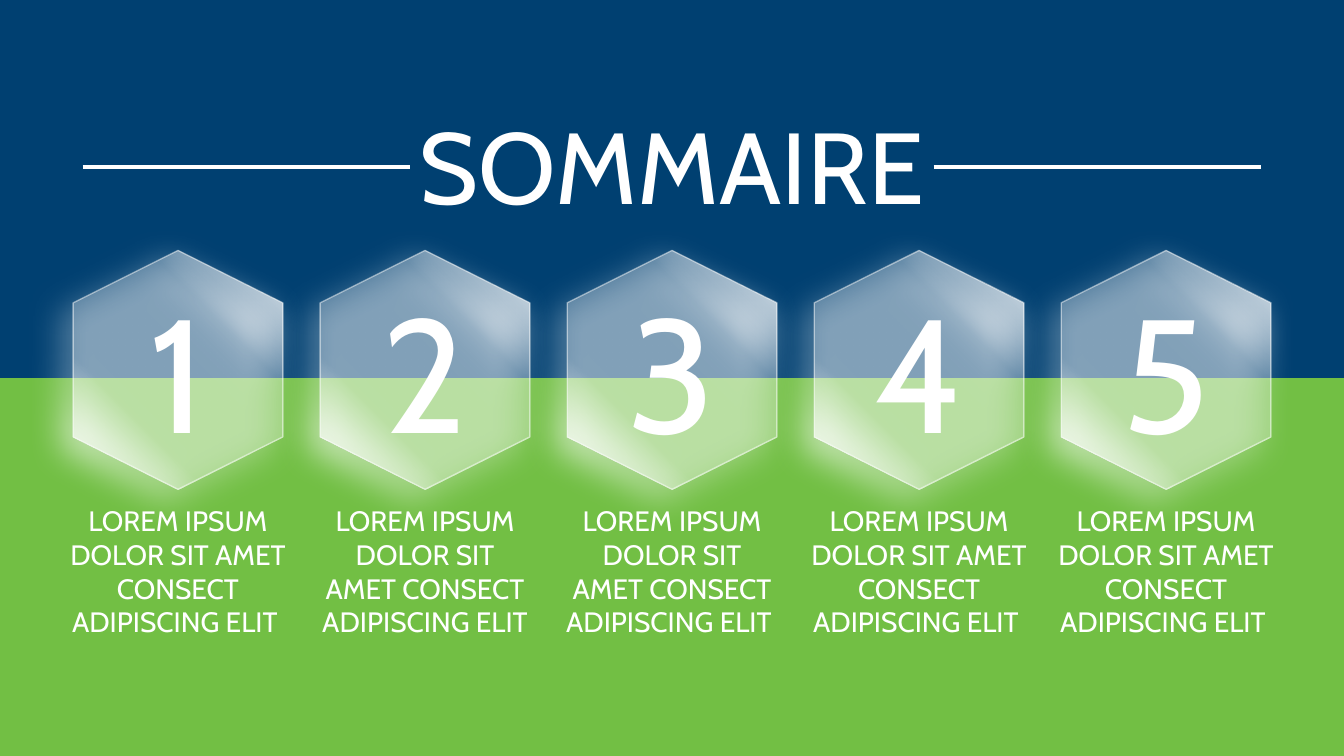
"""Build the summary slide: a title between two rules and five numbered hexagons."""
from pptx import Presentation
from pptx import util as u
from pptx.dml.color import RGBColor
from pptx.enum import shapes, text
from pptx.oxml import parse_xml
from pptx.oxml.ns import nsdecls, qn

WHITE = RGBColor(0xFF, 0xFF, 0xFF)
BLUE = RGBColor(0x00, 0x40, 0x71)
GREEN = RGBColor(0x72, 0xBF, 0x44)
FONT = "Cabin"

TITLE = "SOMMAIRE"
CAPTION = "LOREM IPSUM\nDOLOR SIT AMET CONSECT ADIPISCING ELIT "
ITEMS = [("1", CAPTION, 2.42), ("2", CAPTION, 2.28), ("3", CAPTION, 2.32),
         ("4", CAPTION, 2.42), ("5", CAPTION, 2.54)]
GLASS_STOPS = [(0, 100), (30, 30), (70, 30), (100, 100)]

W, H = 13.33, 7.5
PITCH = 2.45
HEX_W, HEX_H, HEX_TOP = 2.37, 2.08, 2.63
RULE_Y, RULE_MARGIN, RULE_W = 1.66, 0.82, 3.25


def inches(*values):
    return [u.Inches(v) for v in values]


def write(sp, content, size, color=WHITE, font=FONT, align=text.PP_ALIGN.CENTER):
    tf = sp.text_frame
    tf.word_wrap = True
    tf.auto_size = text.MSO_AUTO_SIZE.SHAPE_TO_FIT_TEXT
    tf.vertical_anchor = text.MSO_ANCHOR.TOP
    p = tf.paragraphs[0]
    p.text = content
    p.alignment = align
    for r in p.runs:
        r.font.size = u.Pt(size)
        r.font.name = font
        r.font.color.rgb = color


def add_band(s, top, height, color):
    sp = s.shapes.add_shape(shapes.MSO_SHAPE.RECTANGLE, *inches(0, top, W, height))
    sp.shadow.inherit = False
    sp.fill.solid()
    sp.fill.fore_color.rgb = color
    sp.line.fill.background()


def add_rule(s, left):
    c = s.shapes.add_connector(shapes.MSO_CONNECTOR.STRAIGHT,
                               *inches(left, RULE_Y, left + RULE_W, RULE_Y))
    c.line.color.rgb = WHITE
    c.line.width = u.Pt(3)
    c.element.spPr.append(parse_xml(f'<a:effectLst {nsdecls("a")}/>'))


def add_glass_hexagon(g, center):
    sp = g.shapes.add_shape(shapes.MSO_SHAPE.HEXAGON,
                            *inches(center - HEX_W / 2, HEX_TOP, HEX_W, HEX_H))
    sp.rotation = 90
    sp.line.color.rgb = WHITE
    sp.line.width = u.Pt(1)
    sp.shadow.inherit = False
    spPr = sp.element.spPr
    stops = "".join(
        f'<a:gs pos="{pos * 1000}"><a:srgbClr val="{WHITE}">'
        f'<a:alpha val="{alpha * 1000}"/></a:srgbClr></a:gs>'
        for pos, alpha in GLASS_STOPS)
    spPr.find(qn("a:prstGeom")).addnext(parse_xml(
        f'<a:gradFill {nsdecls("a")} rotWithShape="1"><a:gsLst>{stops}</a:gsLst>'
        '<a:lin ang="2700000" scaled="0"/></a:gradFill>'))
    spPr.find(qn("a:ln")).find(".//" + qn("a:srgbClr")).append(
        parse_xml(f'<a:alpha {nsdecls("a")} val="50000"/>'))
    spPr.find(qn("a:effectLst")).append(parse_xml(
        f'<a:outerShdw {nsdecls("a")} blurRad="{u.Pt(24)}" dist="{u.Pt(11)}" '
        f'dir="8100000" algn="tr" rotWithShape="0"><a:srgbClr val="{WHITE}"/></a:outerShdw>'))


def add_item(s, center, number, caption, caption_w):
    g = s.shapes.add_group_shape()
    write(g.shapes.add_textbox(*inches(center - caption_w / 2, 4.95, caption_w, 1.45)),
          caption, 20)
    add_glass_hexagon(g, center)
    write(g.shapes.add_textbox(*inches(center - HEX_W / 2, 2.65, HEX_W, 2.04)), number, 115)


def main():
    prs = Presentation()
    prs.slide_width, prs.slide_height = inches(W, H)
    s = prs.slides.add_slide(prs.slide_layouts[5])
    add_band(s, 0, 4.58, BLUE)
    add_band(s, H / 2, H / 2, GREEN)
    for i, item in enumerate(ITEMS):
        add_item(s, W / 2 + (i - 2) * PITCH, *item)
    for left in (W - RULE_MARGIN - RULE_W, RULE_MARGIN):
        add_rule(s, left)
    title = s.shapes.title
    title.left, title.top, title.width, title.height = inches(0, 0.98, W, 1.31)
    write(title, TITLE, 72)
    title.element.getparent().append(title.element)
    prs.save("out.pptx")


if __name__ == "__main__":
    main()
